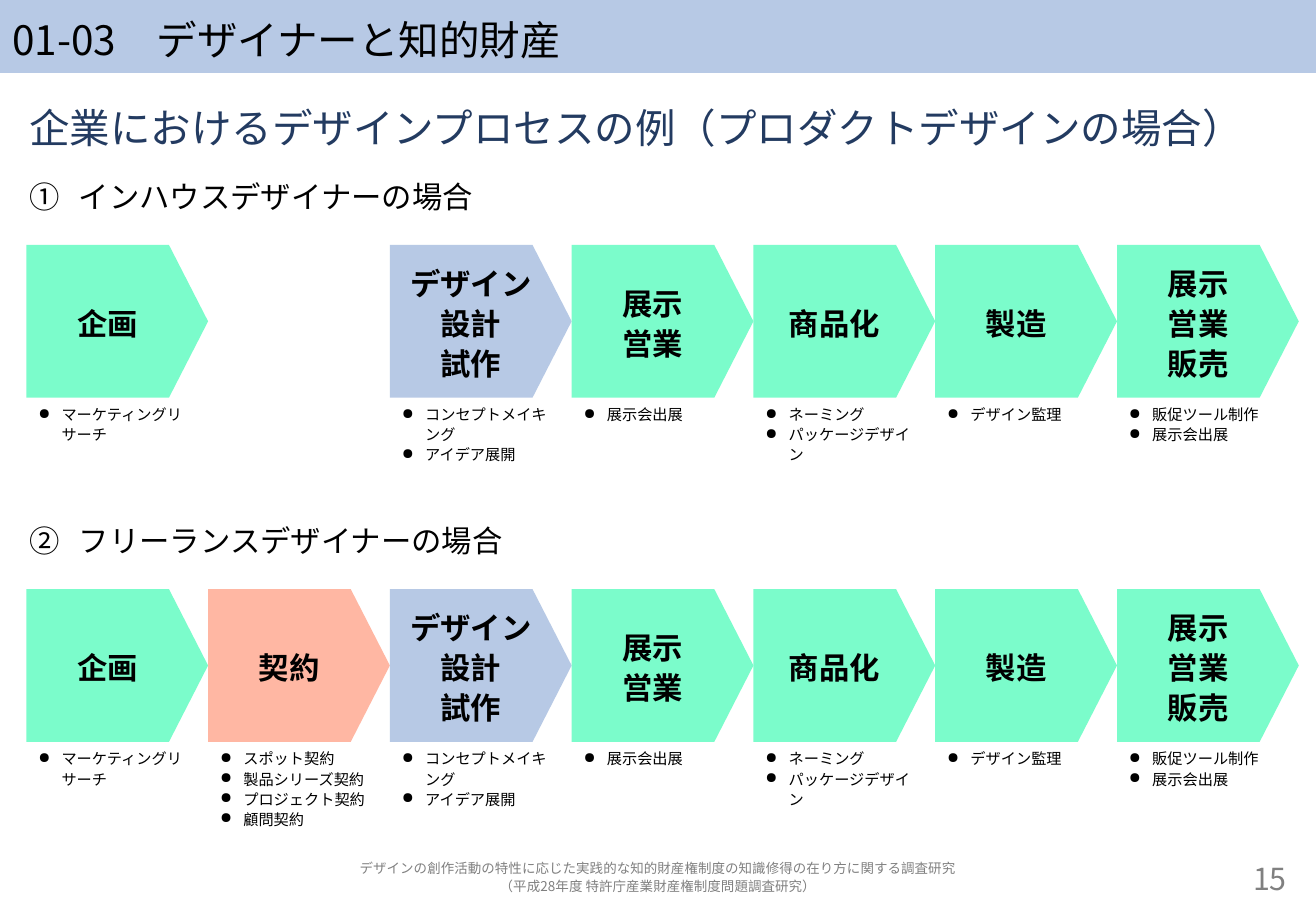
from dataclasses import dataclass

from lxml import etree
from pptx import Presentation
from pptx.dml.color import RGBColor
from pptx.enum.shapes import MSO_SHAPE
from pptx.enum.text import MSO_ANCHOR, MSO_AUTO_SIZE, PP_ALIGN
from pptx.oxml.ns import qn
from pptx.util import Pt

LEFT, CENTER, RIGHT = PP_ALIGN.LEFT, PP_ALIGN.CENTER, PP_ALIGN.RIGHT
TOP, MIDDLE = MSO_ANCHOR.TOP, MSO_ANCHOR.MIDDLE
ARROW = MSO_SHAPE.PENTAGON
NO_AUTOFIT = MSO_AUTO_SIZE.NONE
TITLE_ONLY = 5


def px(length):
    """Lengths are in px, 120 to the inch."""
    return round(length * 7620)


@dataclass(frozen=True)
class Theme:
    font: str = "Noto Sans CJK JP"
    ink: str = "000000"
    navy: str = "233B61"
    gray: str = "808080"
    blue: str = "B7C9E5"
    green: str = "7BFCCB"
    coral: str = "FFB7A3"
    title: int = 24
    heading: int = 18
    note: int = 9
    footer: int = 8
    line_spacing: float = 1.1


@dataclass(frozen=True)
class Box:
    left: float
    top: float
    width: float
    height: float

    def emu(self):
        return [px(side) for side in (self.left, self.top, self.width, self.height)]


THEME = Theme()
PAGE = Box(0, 0, 1300, 900)

# Process steps: column, label lines, fill, notes
PLAN = (0, ["企画"], THEME.green, ["マーケティングリサーチ"])
CONTRACT = (1, ["契約"], THEME.coral,
            ["スポット契約", "製品シリーズ契約", "プロジェクト契約", "顧問契約"])
DESIGN_TO_SALES = [
    (2, ["デザイン", "設計", "試作"], THEME.blue, ["コンセプトメイキング", "アイデア展開"]),
    (3, ["展示", "営業"], THEME.green, ["展示会出展"]),
    (4, ["商品化"], THEME.green, ["ネーミング", "パッケージデザイン"]),
    (5, ["製造"], THEME.green, ["デザイン監理"]),
    (6, ["展示", "営業", "販売"], THEME.green, ["販促ツール制作", "展示会出展"]),
]
COLUMNS = 7
CASES = [
    ("インハウスデザイナーの場合", [PLAN, *DESIGN_TO_SALES]),
    ("フリーランスデザイナーの場合", [PLAN, CONTRACT, *DESIGN_TO_SALES]),
]


def add_bullet(para, indent, tag, **attributes):
    properties = para._p.get_or_add_pPr()
    properties.set("marL", str(px(indent)))
    properties.set("indent", str(px(-indent)))
    etree.SubElement(properties, qn(tag), attributes)


def write(shape, lines, size, color=THEME.ink, align=LEFT, anchor=TOP,
          bold=False, space_before=0, bullet=None):
    frame = shape.text_frame
    frame.word_wrap = True
    frame.auto_size = NO_AUTOFIT
    frame.vertical_anchor = anchor
    for index, line in enumerate(lines):
        para = frame.paragraphs[0] if index == 0 else frame.add_paragraph()
        para.text = line
        if bullet:
            add_bullet(para, **bullet)
        para.alignment = align
        para.line_spacing = THEME.line_spacing
        para.space_before = Pt(space_before)
        para.font.size = Pt(size)
        para.font.bold = bold
        para.font.color.rgb = RGBColor.from_string(color)
        para.font.name = THEME.font
        # East Asian typeface beside the Latin one
        defaults = para._p.pPr.find(qn("a:defRPr"))
        etree.SubElement(defaults, qn("a:ea"), typeface=THEME.font)


def add_text(page, box, lines, size, **style):
    write(page.shapes.add_textbox(*box.emu()), lines, size, **style)


def fill_with(shape, color):
    shape.fill.solid()
    shape.fill.fore_color.rgb = RGBColor.from_string(color)


def add_title(page, box, text):
    title = page.shapes.title
    title.left, title.top, title.width, title.height = box.emu()
    fill_with(title, THEME.blue)
    write(title, [text], THEME.title, anchor=MIDDLE)


def add_step(page, box, label, color, notes):
    arrow_height = 151
    arrow_box = Box(box.left, box.top, box.width, arrow_height)
    arrow = page.shapes.add_shape(ARROW, *arrow_box.emu())
    arrow.adjustments[0] = 0.256
    arrow.shadow.inherit = False
    arrow.line.fill.background()
    fill_with(arrow, color)
    write(arrow, label, THEME.heading, align=CENTER, anchor=MIDDLE, bold=True)

    notes_box = Box(box.left, box.top + arrow_height, box.width, box.height - arrow_height)
    add_text(page, notes_box, notes, THEME.note,
             bullet={"indent": 23, "tag": "a:buChar", "char": "●"})


def add_case(page, box, number, heading, steps):
    add_text(page, Box(box.left, box.top, box.width, 56), [heading], THEME.heading,
             space_before=THEME.heading / 5,
             bullet={"indent": 49, "tag": "a:buAutoNum",
                     "type": "circleNumDbPlain", "startAt": str(number)})
    inset, steps_top = 9, 76
    step_width = (box.width - inset) / COLUMNS
    for column, label, color, notes in steps:
        step_box = Box(box.left + inset + column * step_width, box.top + steps_top,
                       step_width, box.height - steps_top)
        add_step(page, step_box, label, color, notes)


def add_footer(page, box):
    add_text(page, box,
             ["デザインの創作活動の特性に応じた実践的な知的財産権制度の知識修得の在り方に関する調査研究",
              "（平成28年度 特許庁産業財産権制度問題調査研究）"],
             THEME.footer, color=THEME.gray, align=CENTER, anchor=MIDDLE)
    number_width = 161
    number_box = Box(box.left + box.width - number_width, box.top, number_width, box.height)
    add_text(page, number_box, ["15"], THEME.heading,
             color=THEME.gray, align=RIGHT, anchor=MIDDLE)


def main():
    deck = Presentation()
    deck.slide_width, deck.slide_height = px(PAGE.width), px(PAGE.height)
    page = deck.slides.add_slide(deck.slide_layouts[TITLE_ONLY])
    margin = 17
    content_width = PAGE.width - 2 * margin

    add_title(page, Box(0, 0, PAGE.width, 72), "01-03　デザイナーと知的財産")
    add_text(page, Box(margin, 91, content_width, 56),
             ["企業におけるデザインプロセスの例（プロダクトデザインの場合）"],
             THEME.title, color=THEME.navy, space_before=THEME.title / 5)
    for index, (heading, steps) in enumerate(CASES):
        case_box = Box(margin, 166 + 340 * index, content_width, 322)
        add_case(page, case_box, index + 1, heading, steps)
    add_footer(page, Box(margin, 847, content_width, 37))

    deck.save("out.pptx")


if __name__ == "__main__":
    main()
